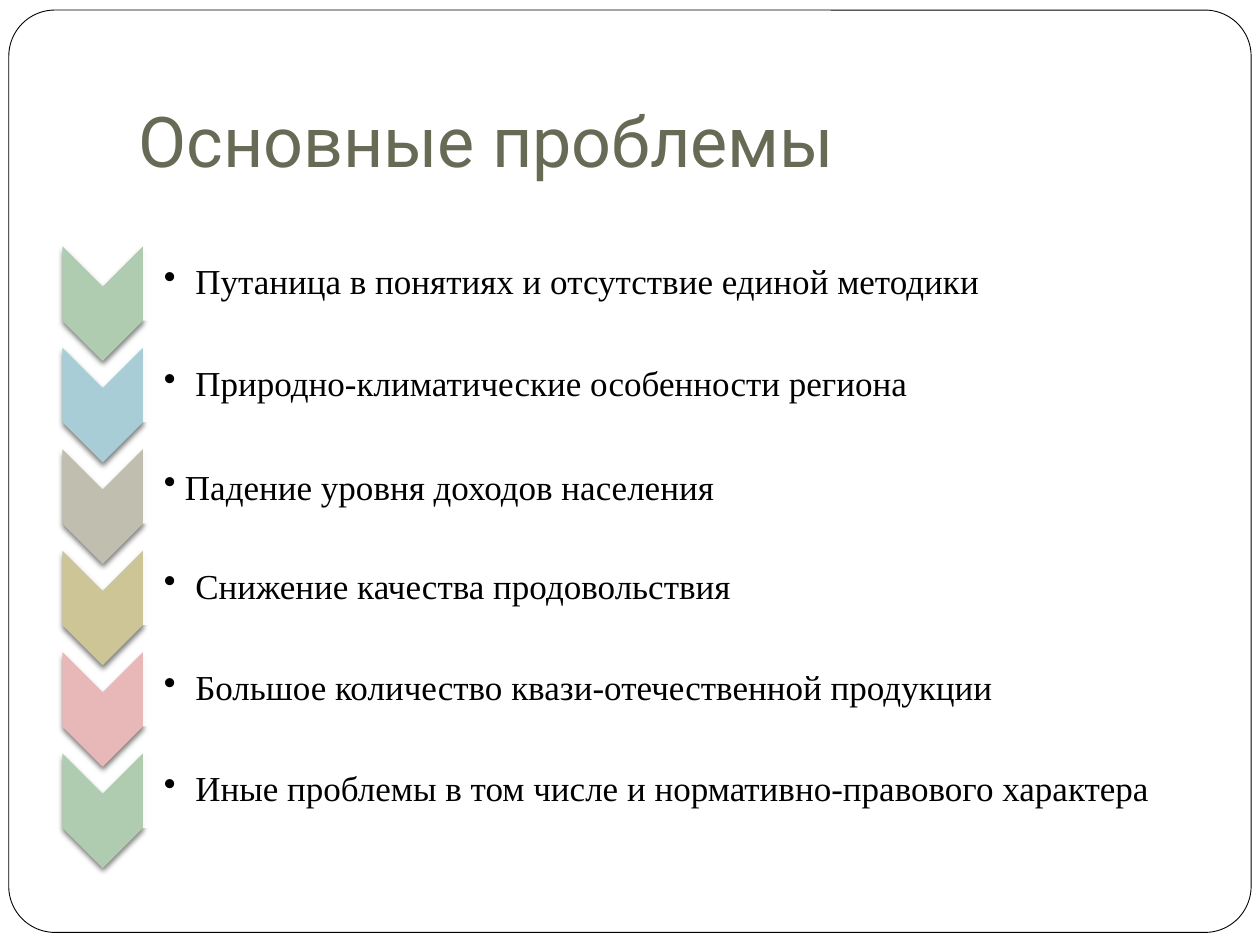
from dataclasses import dataclass

from lxml.etree import SubElement
from pptx import Presentation
from pptx.dml.color import RGBColor
from pptx.enum.shapes import MSO_SHAPE as Shape
from pptx.enum.text import MSO_ANCHOR as Anchor
from pptx.oxml.ns import qn
from pptx.util import Inches, Pt

BLACK = RGBColor(0x00, 0x00, 0x00)
WHITE = RGBColor(0xFF, 0xFF, 0xFF)
OLIVE = RGBColor(0x67, 0x6A, 0x55)
GREEN = RGBColor(0xB0, 0xCC, 0xB0)
BLUE = RGBColor(0xA8, 0xCD, 0xD7)
GREY = RGBColor(0xC0, 0xBE, 0xAF)
SAND = RGBColor(0xCE, 0xC5, 0x97)
PINK = RGBColor(0xE8, 0xB7, 0xB7)

ROW_TOP, ROW_STEP = 1.98, 0.805


@dataclass
class Problem:
    text: str
    color: RGBColor
    hanging: bool = True


PROBLEMS = [
    Problem("Путаница в понятиях и отсутствие единой методики", GREEN),
    Problem("Природно-климатические особенности региона", BLUE),
    Problem(" Падение уровня доходов населения", GREY, hanging=False),
    Problem("Снижение качества продовольствия", SAND),
    Problem("Большое количество квази-отечественной продукции", PINK),
    Problem("Иные проблемы в том числе и нормативно-правового характера", GREEN),
]


def add_filled(s, kind: Shape, box: tuple, color: RGBColor, rotation: float = 0):
    sp = s.shapes.add_shape(kind, *map(Inches, box))
    sp.shadow.inherit = False
    sp.fill.solid()
    sp.fill.fore_color.rgb = color
    sp.line.fill.background()
    sp.rotation = rotation
    return sp


def add_text(s, text: str, box: tuple, *, font: str, size: float, color: RGBColor,
             anchor: Anchor, insets: tuple):
    """Add a one-paragraph text box and return the paragraph."""
    tf = s.shapes.add_textbox(*map(Inches, box)).text_frame
    tf.word_wrap = True
    tf.vertical_anchor = anchor
    tf.margin_left, tf.margin_top, tf.margin_right, tf.margin_bottom = map(Inches, insets)
    p = tf.paragraphs[0]
    r = p.add_run()
    r.text = text
    r.font.name, r.font.size = font, Pt(size)
    r.font.color.rgb = color
    return p


def add_drop_shadow(sp) -> None:
    effects = sp._element.spPr.find(qn("a:effectLst"))
    shadow = SubElement(effects, qn("a:outerShdw"), blurRad=str(Pt(3)), dist=str(Pt(2)),
                        dir="5400000", rotWithShape="0")
    color = SubElement(shadow, qn("a:srgbClr"), val=str(BLACK))
    SubElement(color, qn("a:alpha"), val="50000")


def set_bullet(p, hanging: bool) -> None:
    pPr = p._p.get_or_add_pPr()
    if hanging:
        p.line_spacing = 0.9
        p.space_after = Pt(3)
        pPr.set("marL", str(Inches(0.25)))
        pPr.set("indent", str(-Inches(0.25)))
    SubElement(pPr, qn("a:buChar"), char="•")


def add_problem(s, problem: Problem, top: float) -> None:
    chevron = add_filled(s, Shape.CHEVRON, (0.36, top + 0.11, 0.91, 0.64), problem.color, 90)
    add_drop_shadow(chevron)
    band = add_filled(s, Shape.ROUND_2_SAME_RECTANGLE, (5.02, top - 3.91, 0.59, 8.36), WHITE, 90)
    SubElement(band.fill._xPr.find(".//" + qn("a:srgbClr")), qn("a:alpha"), val="90000")
    p = add_text(s, problem.text, (1.14, top, 8.33, 0.54), font="Times New Roman", size=20,
                 color=BLACK, anchor=Anchor.MIDDLE, insets=(0.16, 0.01, 0.01, 0.01))
    set_bullet(p, problem.hanging)


def main() -> None:
    prs = Presentation()
    prs.slide_width, prs.slide_height = Inches(10), Inches(7.5)
    s = prs.slides.add_slide(prs.slide_layouts[6])

    frame = add_filled(s, Shape.ROUNDED_RECTANGLE, (0.07, 0.08, 9.86, 7.32), WHITE)
    frame.adjustments[0] = 0.05
    frame.line.color.rgb = BLACK
    frame.line.width = Pt(0.5)

    add_text(s, "Основные проблемы", (1, 0.29, 8.5, 1.25), font="Roboto", size=40,
             color=OLIVE, anchor=Anchor.BOTTOM, insets=(0.1, 0.05, 0.1, 0.1))
    for i, problem in enumerate(PROBLEMS):
        add_problem(s, problem, ROW_TOP + i * ROW_STEP)
    prs.save("out.pptx")


if __name__ == "__main__":
    main()
